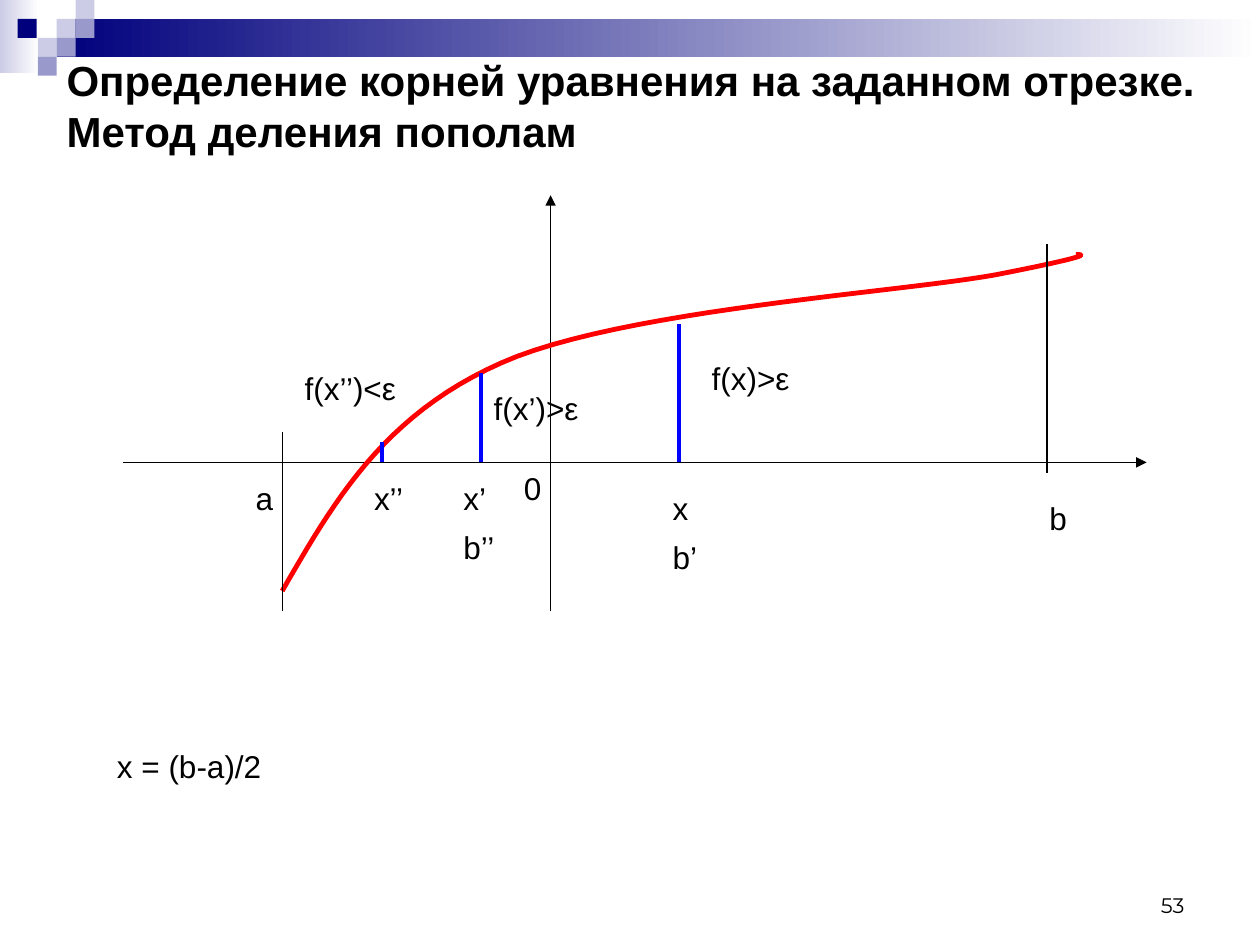
from dataclasses import dataclass

from lxml import etree
from pptx import Presentation
from pptx.dml.color import RGBColor
from pptx.enum import shapes, text
from pptx.oxml import ns
from pptx.util import Inches, Pt


@dataclass(frozen=True)
class Theme:
    black: str = "000000"
    white: str = "FFFFFF"
    navy: str = "00007D"
    lavender: str = "CCCCE6"
    violet: str = "9999CC"
    red: str = "FF0000"
    blue: str = "0000FF"
    font: str = "Arial"
    number_font: str = "Montserrat"
    title_size: float = 24
    label_size: float = 18
    number_size: float = 12
    thin: float = 0.75
    medium: float = 2.25
    thick: float = 2.75


THEME = Theme()
AXIS_Y = 3.67
ORIGIN_X = 4.37
TILE = 0.15

TILES = [
    (0.45, 0.15, THEME.lavender),
    (0.6, 0, THEME.lavender),
    (0.6, 0.15, THEME.violet),
    (0.3, 0.3, THEME.lavender),
    (0.14, 0.15, THEME.navy),
    (0.45, 0.3, THEME.violet),
    (0.3, 0.45, THEME.violet),
]

CURVE_START = (2.24, 4.69)
CURVE_SEGMENTS = [
    ((2.64, 4), (3.03, 3.3), (3.98, 2.88)),
    ((4.92, 2.46), (7.15, 2.32), (7.91, 2.18)),
    ((8.67, 2.03), (8.61, 2.02), (8.54, 2.02)),
]

BOUNDS = [(2.24, 3.43, 4.85), (8.31, 1.94, 3.75)]
ORDINATES = [(5.39, 2.57), (3.82, 2.96), (3.03, 3.51)]

LABELS = [
    ("0", 4.06, 3.67, 0.34),
    ("a", 1.93, 3.75, 0.34),
    ("b", 8.23, 3.91, 0.34),
    ("x", 5.24, 3.83, 0.33),
    ("f(x)>ε", 5.55, 2.8, 0.94),
    ("x’", 3.58, 3.75, 0.4),
    ("f(x’)>ε", 3.82, 3.04, 0.94),
    ("x’’", 2.87, 3.75, 0.55),
    ("f(x’’)<ε", 2.32, 2.88, 1.1),
    ("x = (b-a)/2", 0.83, 5.88, 1.35),
    ("b’", 5.24, 4.22, 0.4),
    ("b’’", 3.58, 4.14, 0.45),
]


def color(value):
    return RGBColor.from_string(value)


def add_rectangle(page, left, top, width, height):
    box = page.shapes.add_shape(
        shapes.MSO_SHAPE.RECTANGLE,
        Inches(left), Inches(top), Inches(width), Inches(height),
    )
    box.shadow.inherit = False
    box.line.fill.background()
    return box


def add_tile(page, left, top, fill):
    box = add_rectangle(page, left, top, TILE, TILE)
    box.fill.solid()
    box.fill.fore_color.rgb = color(fill)


def add_fade(page, left, top, width, height, start):
    box = add_rectangle(page, left, top, width, height)
    box.fill.gradient()
    box.fill.gradient_angle = 0
    for stop, value in zip(box.fill.gradient_stops, (start, THEME.white)):
        stop.color.rgb = color(value)


def add_line(page, start, end, stroke=THEME.black, width=THEME.thin, arrow=False):
    line = page.shapes.add_connector(
        shapes.MSO_CONNECTOR.STRAIGHT, *map(Inches, start + end)
    )
    line.line.color.rgb = color(stroke)
    line.line.width = Pt(width)
    if arrow:
        outline = line.line._get_or_add_ln()
        etree.SubElement(outline, ns.qn("a:tailEnd"), type="triangle")
    etree.SubElement(line._element.spPr, ns.qn("a:effectLst"))


def add_text(page, words, left, top, width, height, size=THEME.label_size,
             font=THEME.font, bold=False, wrap=True, align=text.PP_ALIGN.LEFT,
             anchor=text.MSO_ANCHOR.TOP):
    box = page.shapes.add_textbox(
        Inches(left), Inches(top), Inches(width), Inches(height)
    )
    frame = box.text_frame
    frame.word_wrap = wrap
    frame.vertical_anchor = anchor
    para = frame.paragraphs[0]
    para.text = words
    para.alignment = align
    para.font.name = font
    para.font.size = Pt(size)
    para.font.bold = bold
    para.font.color.rgb = color(THEME.black)
    return box


def add_label(page, words, left, top, width):
    box = add_text(page, words, left, top, width, 0.4, wrap=False)
    box.text_frame.auto_size = text.MSO_AUTO_SIZE.SHAPE_TO_FIT_TEXT


def bezier_point(points, t):
    weights = ((1 - t) ** 3, 3 * t * (1 - t) ** 2, 3 * t**2 * (1 - t), t**3)
    return tuple(
        sum(weight * value for weight, value in zip(weights, values))
        for values in zip(*points)
    )


def add_curve(page, start, segments, steps=24):
    points = []
    knot = start
    for segment in segments:
        controls = (knot, *segment)
        points += [bezier_point(controls, i / steps) for i in range(1, steps + 1)]
        knot = segment[-1]
    builder = page.shapes.build_freeform(*map(Inches, start))
    builder.add_line_segments(
        [(Inches(x), Inches(y)) for x, y in points], close=False
    )
    curve = builder.convert_to_shape()
    curve.shadow.inherit = False
    curve.fill.background()
    curve.line.color.rgb = color(THEME.red)
    curve.line.width = Pt(THEME.thick)


def add_banner(page):
    add_fade(page, 0, 0, 0.31, 0.58, THEME.lavender)
    add_fade(page, 0.45, 0.15, 9.55, 0.3, THEME.navy)
    for tile in TILES:
        add_tile(page, *tile)


def add_graph(page):
    add_line(page, (0.98, AXIS_Y), (9.1, AXIS_Y), arrow=True)
    add_line(page, (ORIGIN_X, 4.85), (ORIGIN_X, 1.55), arrow=True)
    add_curve(page, CURVE_START, CURVE_SEGMENTS)
    for x, top, bottom in BOUNDS:
        add_line(page, (x, top), (x, bottom))
    for x, top in ORDINATES:
        add_line(page, (x, top), (x, AXIS_Y), THEME.blue, THEME.medium)
    for label in LABELS:
        add_label(page, *label)


def main():
    deck = Presentation()
    deck.slide_width = Inches(10)
    deck.slide_height = Inches(7.5)
    page = deck.slides.add_slide(deck.slide_layouts[6])
    add_banner(page)
    add_text(page, "53", 7.17, 6.83, 2.33, 0.5, THEME.number_size,
             THEME.number_font, align=text.PP_ALIGN.RIGHT,
             anchor=text.MSO_ANCHOR.BOTTOM)
    add_text(page, "Определение корней уравнения на заданном отрезке.\v"
             "Метод деления пополам", 0.43, 0.52, 10, 0.63, THEME.title_size,
             bold=True, anchor=text.MSO_ANCHOR.MIDDLE)
    add_graph(page)
    deck.save("out.pptx")


if __name__ == "__main__":
    main()
